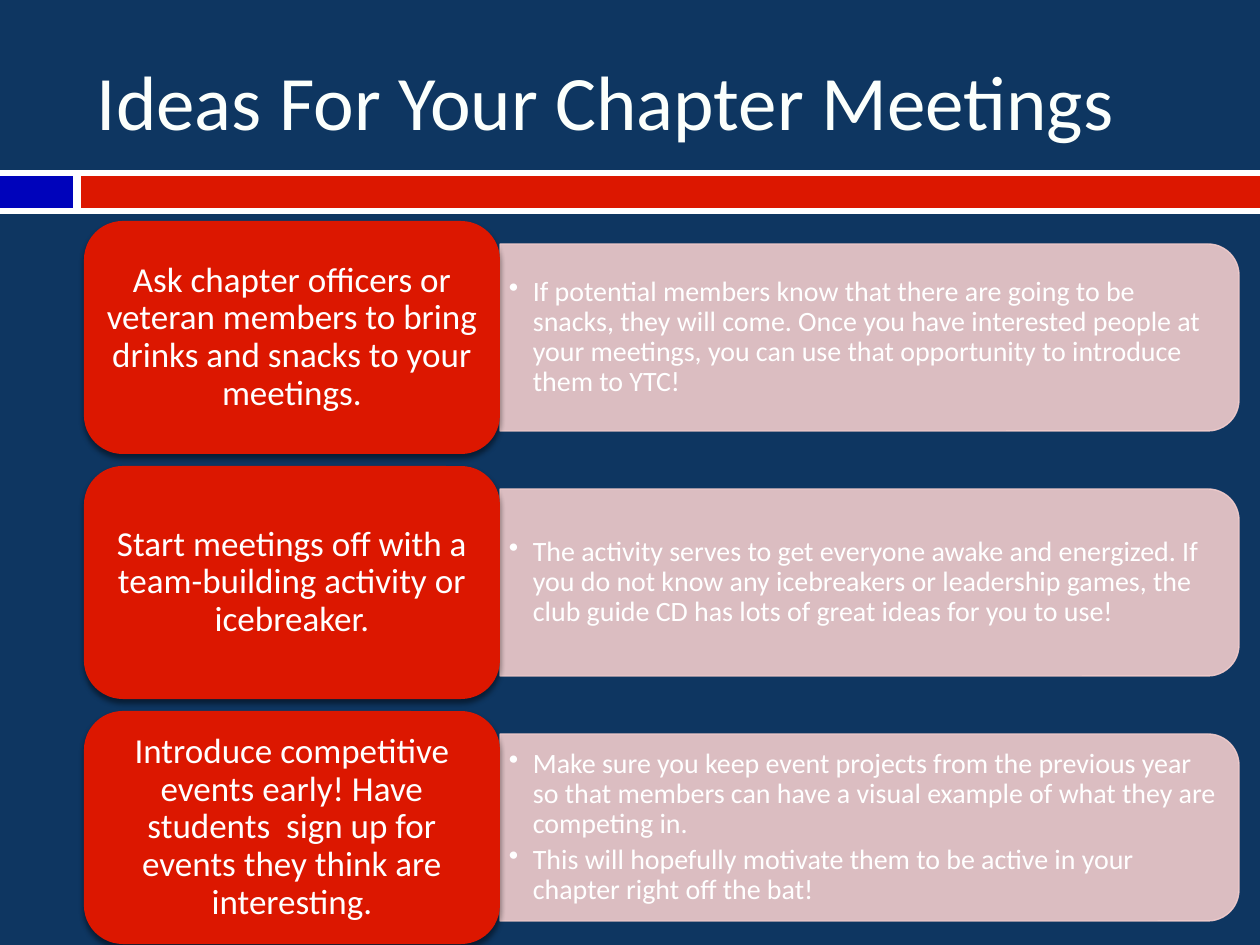
from lxml import etree
from pptx import Presentation
from pptx import util as u
from pptx.dml.color import RGBColor
from pptx.enum import shapes, text
from pptx.oxml.ns import qn

HUES = {"navy": "0E3661", "white": "FFFFFF", "blue": "0003BB",
        "red": "DC1700", "pink": "F2CCCC", "title": "FBFFFC"}
KIND = shapes.MSO_SHAPE

IDEAS = [
    ("Ask chapter officers or veteran members to bring drinks and snacks to your meetings.",
     ["If potential members know that there are going to be snacks, they will come. "
      "Once you have interested people at your meetings, you can use that opportunity "
      "to introduce them to YTC!"]),
    ("Start meetings off with a team-building activity or icebreaker.",
     ["The activity serves to get everyone awake and energized. If you do not know any "
      "icebreakers or leadership games, the club guide CD has lots of great ideas for you to use!"]),
    ("Introduce competitive events early! Have students  sign up for events they think are interesting.",
     ["Make sure you keep event projects from the previous year so that members can have "
      "a visual example of what they are competing in.",
      "This will hopefully motivate them to be active in your chapter right off the bat!"]),
]


def px(n):
    return u.Emu(round(n * 914400 / 126))


def hue(name):
    return RGBColor.from_string(HUES[name])


def node(up, tag, **attrs):
    """Append an XML element with the given attributes."""
    kid = etree.SubElement(up, qn(tag))
    for key, val in attrs.items():
        kid.set(key, str(val))
    return kid


class Deck:
    font = "Calibri"

    def __init__(self):
        self.show = Presentation()
        self.show.slide_width, self.show.slide_height = px(1260), px(945)
        self.slide = self.show.slides.add_slide(self.show.slide_layouts[5])
        fill = self.slide.background.fill
        fill.solid()
        fill.fore_color.rgb = hue("navy")

    def style(self, para, size, color, align):
        para.alignment = align
        para.font.name, para.font.size = self.font, u.Pt(size)
        para.font.color.rgb = hue(color)

    def frame(self, shape, side, top):
        """Set wrapping, middle anchor and insets of a shape's text."""
        box = shape.text_frame
        box.word_wrap = True
        box.vertical_anchor = text.MSO_ANCHOR.MIDDLE
        box.margin_left = box.margin_right = px(side)
        box.margin_top = box.margin_bottom = px(top)
        return box

    def title(self, words, x, y, w, h):
        head = self.slide.shapes.title
        head.left, head.top, head.width, head.height = map(px, (x, y, w, h))
        box = self.frame(head, 13, 6)
        box.text = words
        self.style(box.paragraphs[0], 44, "title", text.PP_ALIGN.LEFT)

    def shape(self, kind, color, x, y, w, h):
        form = self.slide.shapes.add_shape(kind, *map(px, (x, y, w, h)))
        form.shadow.inherit = False
        form.fill.solid()
        form.fill.fore_color.rgb = hue(color)
        form.line.fill.background()
        return form

    def panel(self, x, y, w, h):
        """Draw a translucent panel rounded on its right, by a quarter turn."""
        form = self.shape(KIND.ROUND_2_SAME_RECTANGLE, "pink",
                          x + (w - h) / 2, y + (h - w) / 2, h, w)
        form.rotation = 90
        form.line.color.rgb = hue("pink")
        form.line.width = u.Pt(0.79)
        for tint in form._element.spPr.iter(qn("a:srgbClr")):
            node(tint, "a:alpha", val=90000)

    def card(self, words, x, y, w, h):
        form = self.shape(KIND.ROUNDED_RECTANGLE, "red", x, y, w, h)
        glow = node(form._element.spPr.find(qn("a:effectLst")), "a:outerShdw",
                    blurRad=u.Pt(3), dist=u.Pt(2.4), dir=5400000, rotWithShape=0)
        node(node(glow, "a:srgbClr", val="000000"), "a:alpha", val=45000)
        box = self.frame(form, 10, 5)
        box.text = words
        para = box.paragraphs[0]
        para.line_spacing = 0.9
        self.style(para, 20, "white", text.PP_ALIGN.CENTER)

    def points(self, items, x, y, w, h):
        """Add a bulleted text box."""
        box = self.frame(self.slide.shapes.add_textbox(*map(px, (x, y, w, h))), 9, 4)
        box.text = "\n".join(items)
        for para in box.paragraphs:
            para.line_spacing = 0.9
            para.space_after = u.Pt(3)
            prop = para._p.get_or_add_pPr()
            prop.set("marL", str(px(24)))
            prop.set("indent", str(-px(24)))
            node(prop, "a:buChar", char="•")
            self.style(para, 16, "white", text.PP_ALIGN.LEFT)


def main():
    deck = Deck()
    for color, x, y, w, h in [("white", 0, 170, 1260, 44),
                              ("blue", 0, 176, 73, 32),
                              ("red", 81, 176, 1179, 32)]:
        deck.shape(KIND.RECTANGLE, color, x, y, w, h)
    deck.title("Ideas For Your Chapter Meetings", 84, 32, 1124, 136)
    for row, (idea, notes) in enumerate(IDEAS):
        top = 221 + 245 * row
        deck.panel(500, top + 23, 739, 187)
        deck.points(notes, 500, top + 32, 730, 169)
        deck.card(idea, 84, top, 416, 233)
    deck.show.save("out.pptx")


if __name__ == "__main__":
    main()
